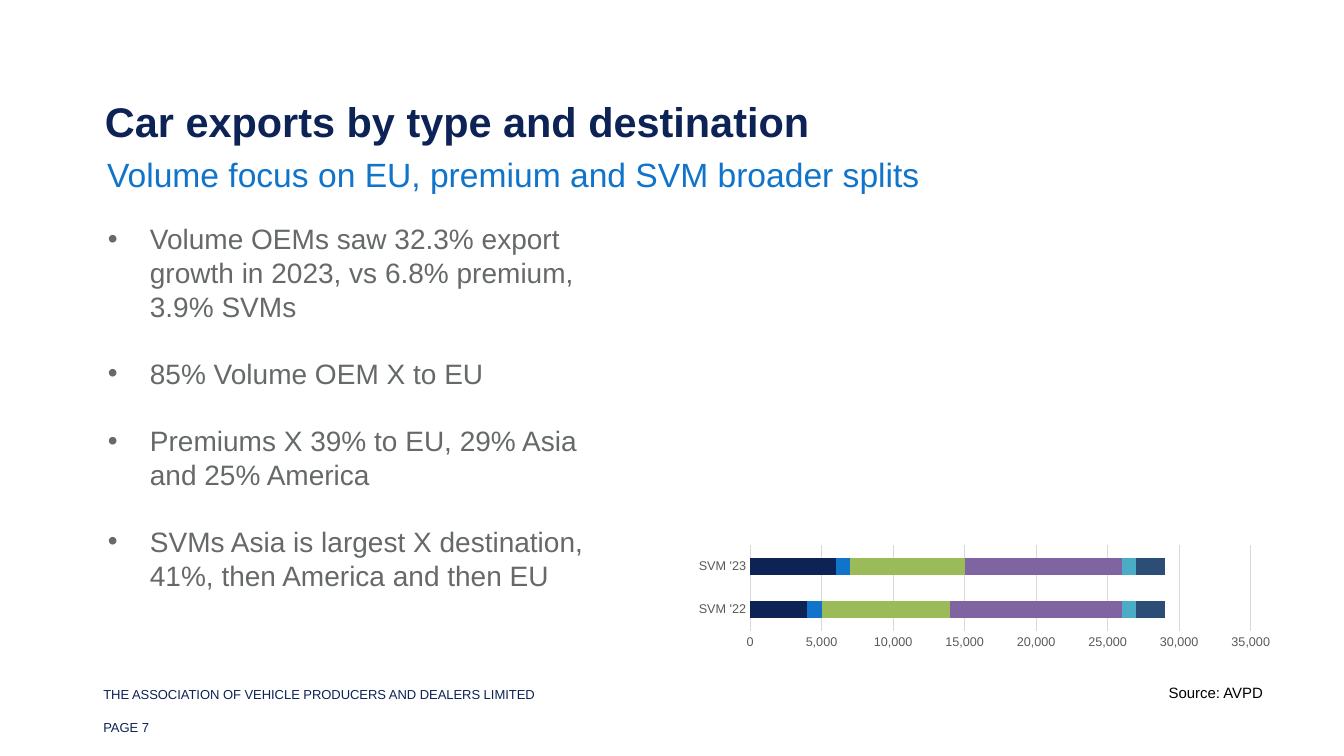
from lxml import etree
from pptx import Presentation
from pptx import util as u
from pptx.chart.data import CategoryChartData
from pptx.dml.color import RGBColor
from pptx.enum import chart as ch, text as t
from pptx.oxml import ns, parse_xml

Pt = u.Pt
FONT = "Arial"
COLOURS = {
    "navy": "0D2255", "blue": "1074CB", "grey": "666969", "black": "000000",
    "label": "595959", "grid": "D9D9D9", "white": "FFFFFF", "green": "9BBB59",
    "purple": "8064A2", "teal": "4BACC6", "orange": "F79646", "slate": "2C4D75",
}


def rgb(name):
    return RGBColor.from_string(COLOURS[name])


def add_text(lines, box, size, colour, bold=False, align=t.PP_ALIGN.LEFT,
             insets=(7.2, 3.6, 7.2, 3.6), bullet_indent=0, gap=0):
    frame = slide.shapes.add_textbox(*map(Pt, box)).text_frame
    frame.word_wrap = True
    frame.margin_left, frame.margin_top, frame.margin_right, frame.margin_bottom = map(Pt, insets)
    for i, line in enumerate(lines):
        para = frame.paragraphs[0] if i == 0 else frame.add_paragraph()
        para.alignment = align
        para.line_spacing = Pt(round(size * 1.2, 1))
        if i:
            para.space_before = Pt(gap)
        if bullet_indent:
            props = para._p.get_or_add_pPr()
            props.set("marL", str(Pt(bullet_indent)))
            props.set("indent", str(-Pt(bullet_indent)))
            etree.SubElement(props, ns.qn("a:buFont")).set("typeface", FONT)
            etree.SubElement(props, ns.qn("a:buChar")).set("char", "•")
        run = para.add_run()
        run.text = line
        run.font.name, run.font.size, run.font.bold = FONT, Pt(size), bold
        run.font.color.rgb = rgb(colour)


deck = Presentation()
deck.slide_width, deck.slide_height = Pt(960), Pt(540)
slide = deck.slides.add_slide(deck.slide_layouts[6])

footer_insets = (9.4, 5, 9.4, 5)
heading_insets = (5, 2.9, 5, 2.9)
add_text(["THE ASSOCIATION OF VEHICLE PRODUCERS AND DEALERS LIMITED"],
         (64.4, 485.3, 485.3, 20.9), 9.3, "navy", insets=footer_insets)
add_text(["PAGE 7"], (64.4, 509, 80, 20.9), 9.3, "navy", insets=footer_insets)
add_text(["Car exports by type and destination"],
         (70, 65.6, 818, 39.6), 29.6, "navy", bold=True, insets=heading_insets)
add_text(["Volume focus on EU, premium and SVM broader splits"],
         (71.5, 107.3, 869.8, 39.6), 24, "blue", insets=heading_insets)
add_text(["Volume OEMs saw 32.3% export growth in 2023, vs 6.8% premium, 3.9% SVMs",
          "85% Volume OEM X to EU",
          "Premiums X 39% to EU, 29% Asia and 25% America",
          "SVMs Asia is largest X destination, 41%, then America and then EU"],
         (70, 155, 356.4, 298), 20, "grey", bullet_indent=30, gap=24)
add_text(["Source: AVPD"], (797, 484.6, 115.2, 20.2), 10.7, "black",
         align=t.PP_ALIGN.RIGHT, insets=(7.2, 3.6, 10, 3.6))

destinations = [
    ("navy", (4000, 6000)),
    ("blue", (1000, 1000)),
    ("green", (9000, 8000)),
    ("purple", (12000, 11000)),
    ("teal", (1000, 1000)),
    ("orange", (0, 0)),
    ("slate", (2000, 2000)),
]
exports = CategoryChartData(number_format="#,##0")
exports.categories = ["SVM '22", "SVM '23"]
for number, (_, volumes) in enumerate(destinations, 1):
    exports.add_series(f"Series {number}", volumes)

chart = slide.shapes.add_chart(ch.XL_CHART_TYPE.BAR_STACKED, Pt(449.8), Pt(367),
                               Pt(480.2), Pt(112.3), exports).chart
chart.has_legend = False
chart.has_title = False
chart.font.name, chart.font.size = FONT, Pt(10)
chart.font.color.rgb = rgb("black")

bars = chart.plots[0]
bars.gap_width, bars.overlap, bars.vary_by_categories = 150, 100, False
for series, (colour, _) in zip(bars.series, destinations):
    series.format.fill.solid()
    series.format.fill.fore_color.rgb = rgb(colour)

for axis in (chart.category_axis, chart.value_axis):
    axis.major_tick_mark = axis.minor_tick_mark = ch.XL_TICK_MARK.NONE
    labels = axis.tick_labels.font
    labels.name, labels.size = FONT, Pt(9)
    labels.color.rgb = rgb("label")

volume_axis = chart.value_axis
volume_axis.minimum_scale, volume_axis.maximum_scale, volume_axis.major_unit = 0, 35000, 5000
volume_axis.tick_labels.number_format = "#,##0"
volume_axis.tick_labels.number_format_is_linked = False
volume_axis.format.line.fill.background()
for line in (chart.category_axis.format.line, volume_axis.major_gridlines.format.line):
    line.color.rgb = rgb("grid")
    line.width = Pt(0.75)

plot_area = chart._chartSpace.chart.plotArea
for layout in plot_area.findall(ns.qn("c:layout")):
    plot_area.remove(layout)
plot_area.insert(0, parse_xml(
    f'<c:layout {ns.nsdecls("c")}><c:manualLayout><c:layoutTarget val="inner"/>'
    '<c:xMode val="edge"/><c:yMode val="edge"/><c:x val="0.179"/><c:y val="0.2"/>'
    '<c:w val="0.745"/><c:h val="0.544"/></c:manualLayout></c:layout>'))
chart._chartSpace.chart.addnext(parse_xml(
    f'<c:spPr {ns.nsdecls("c", "a")}><a:solidFill><a:srgbClr val="{COLOURS["white"]}"/>'
    '</a:solidFill><a:ln><a:noFill/></a:ln></c:spPr>'))

deck.save("out.pptx")
